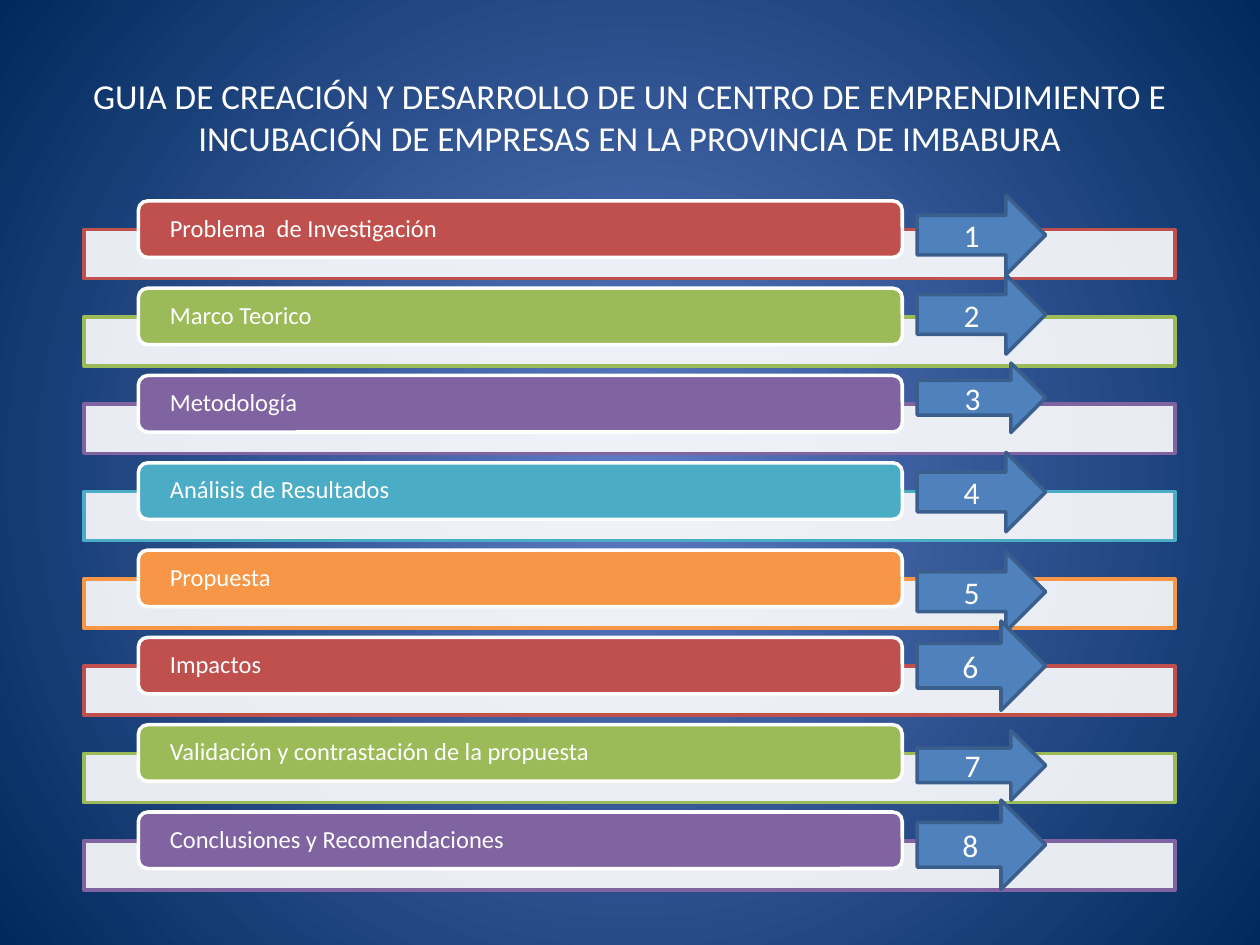
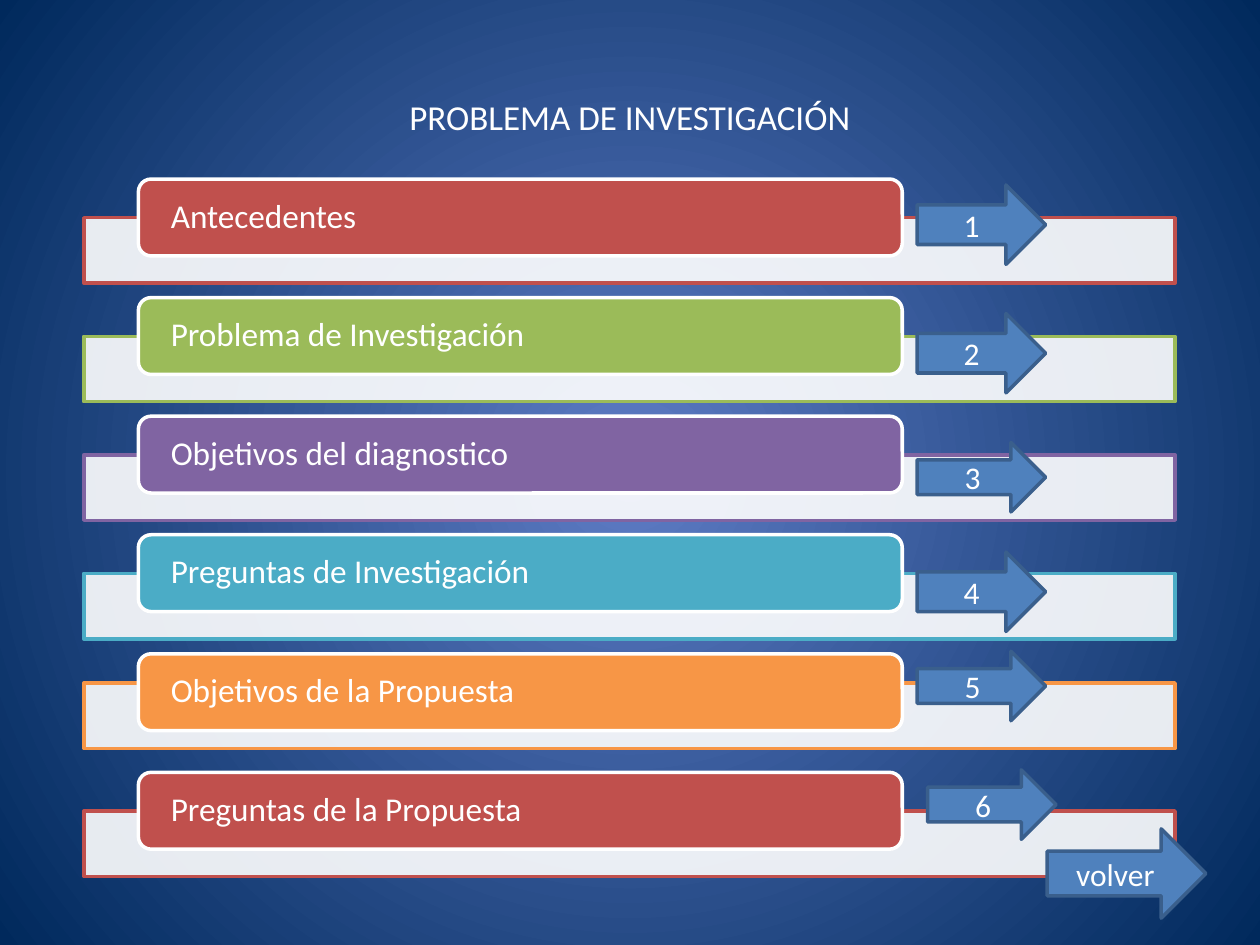
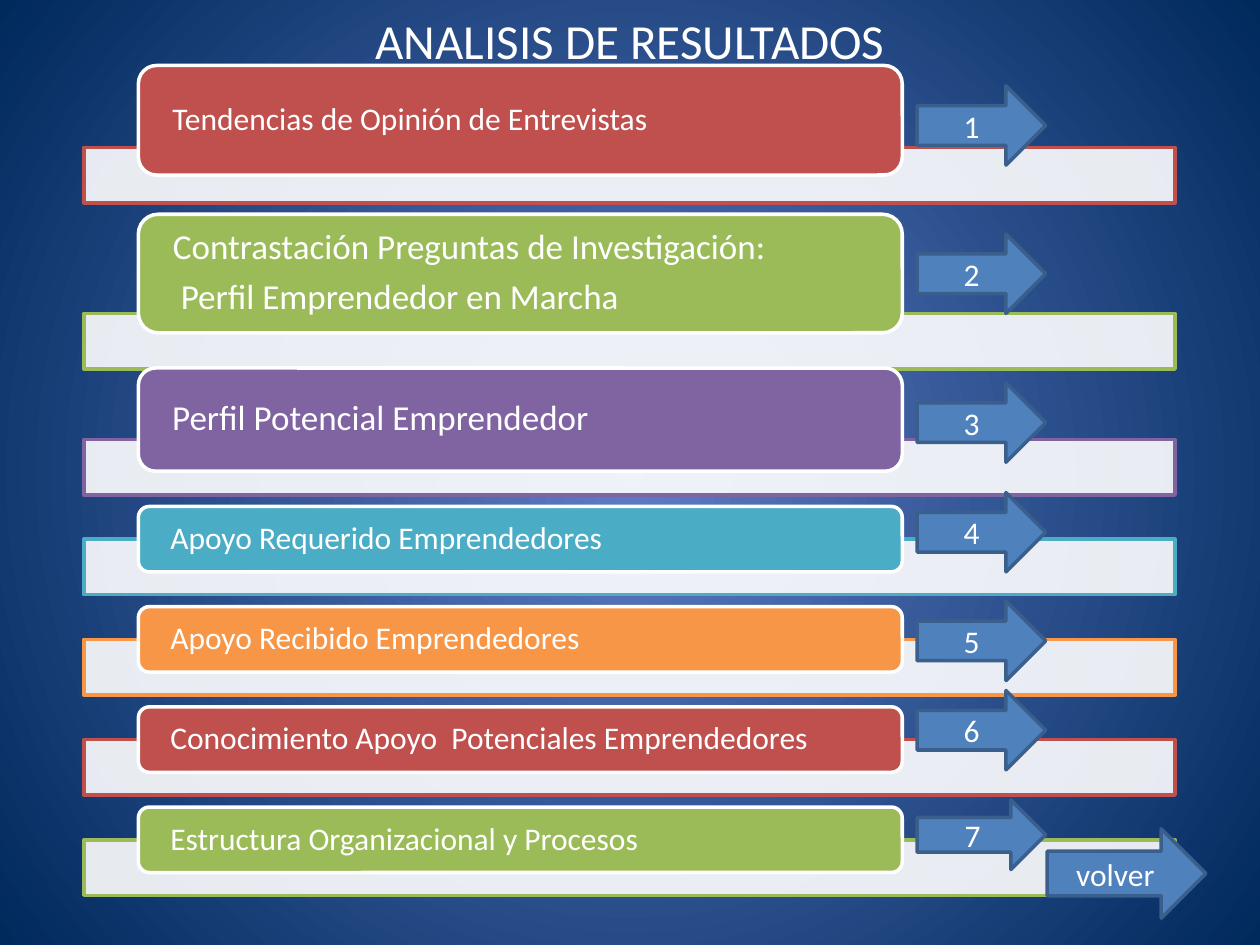
"""Build three index slides: banded entries with numbered arrows."""
from itertools import cycle

from lxml.etree import SubElement
from pptx import Presentation
from pptx.dml.color import RGBColor
from pptx.enum.shapes import MSO_SHAPE
from pptx.enum.text import MSO_ANCHOR, PP_ALIGN
from pptx.oxml.ns import qn
from pptx.util import Cm, Pt

FONT = "Calibri"
WHITE = RGBColor(0xFF, 0xFF, 0xFF)
GLOW = RGBColor(0x5E, 0x7C, 0xC5)
NAVY = RGBColor(0x00, 0x29, 0x5C)
ARROW_BLUE = RGBColor(0x4F, 0x81, 0xBD)
ARROW_EDGE = RGBColor(0x3A, 0x5F, 0x8C)
ACCENTS = [
    RGBColor(0xC0, 0x50, 0x4D),
    RGBColor(0x9B, 0xBB, 0x59),
    RGBColor(0x80, 0x64, 0xA2),
    RGBColor(0x4B, 0xAC, 0xC6),
    RGBColor(0xF7, 0x96, 0x46),
]


def grid(texts, first, pitch, height, drop, size):
    """Return evenly spaced rows: text, label top, label height, bar top, size."""
    tops = [first + i * pitch for i in range(len(texts))]
    return [(text, top, height, top + drop, size) for text, top in zip(texts, tops)]


THESIS_ROWS = grid(
    ["Problema  de Investigación", "Marco Teorico", "Metodología",
     "Análisis de Resultados", "Propuesta", "Impactos",
     "Validación y contrastación de la propuesta",
     "Conclusiones y Recomendaciones"],
    first=4.05, pitch=1.76, height=1.14, drop=0.58, size=14)

PROBLEM_ROWS = grid(
    ["Antecedentes", "Problema de Investigación", "Objetivos del diagnostico",
     "Preguntas de Investigación"],
    first=3.61, pitch=2.39, height=1.55, drop=0.78, size=19)
PROBLEM_ROWS += [
    ("Objetivos de la Propuesta", 13.18, 1.55, 13.77, 19),
    ("Preguntas de la Propuesta", 15.57, 1.55, 16.35, 19),
]

RESULT_ROWS = [
    ("Tendencias de Opinión de Entrevistas", 1.32, 2.21, 2.97, 18),
    ("Contrastación Preguntas de Investigación:\n Perfil Emprendedor en Marcha",
     4.32, 2.39, 6.32, 20),
    ("Perfil Potencial Emprendedor", 7.42, 2.08, 8.86, 20),
]
RESULT_ROWS += grid(
    ["Apoyo Requerido Emprendedores", "Apoyo Recibido Emprendedores",
     "Conocimiento Apoyo  Potenciales Emprendedores",
     "Estructura Organizacional y Procesos"],
    first=10.21, pitch=2.02, height=1.32, drop=0.66, size=18)

SLIDES = [
    {"title": "GUIA DE CREACIÓN Y DESARROLLO DE UN CENTRO DE EMPRENDIMIENTO E "
              "INCUBACIÓN DE EMPRESAS EN LA PROVINCIA DE IMBABURA",
     "title_box": (0.76, 3.18, 20), "rows": THESIS_ROWS, "bar_height": 0.99,
     "arrows": [(3.94, 1.6), (5.54, 1.6), (7.32, 1.4), (9.12, 1.6),
                (11.13, 1.6), (12.52, 1.8), (14.73, 1.4), (16.13, 1.8)],
     "back": False},
    {"title": "PROBLEMA DE INVESTIGACIÓN",
     "title_box": (0.76, 3.18, 20), "rows": PROBLEM_ROWS, "bar_height": 1.32,
     "arrows": [(3.73, 1.6), (6.32, 1.6), (8.92, 1.4), (11.13, 1.6),
                (13.13, 1.4), (15.52, 1.4, 18.7)],
     "back": True},
    {"title": "ANALISIS DE RESULTADOS",
     "title_box": (0.13, 1.37, 28), "rows": RESULT_ROWS, "bar_height": 1.12,
     "arrows": [(1.73, 1.6), (4.72, 1.6), (7.72, 1.6), (9.93, 1.6),
                (12.12, 1.6), (13.92, 1.6), (16.13, 1.4)],
     "back": True},
]


def set_background(master):
    fill = master.background.fill
    fill.gradient()
    for stop, color in zip(fill.gradient_stops, (GLOW, NAVY)):
        stop.color.rgb = color
    grad = master.element.find(".//" + qn("p:bg")).find(".//" + qn("a:gradFill"))
    grad.remove(grad.find(qn("a:lin")))
    circle = SubElement(grad, qn("a:path"), path="circle")
    SubElement(circle, qn("a:fillToRect"), l="50000", t="50000", r="50000", b="50000")


def write(sp, text, size, align):
    tf = sp.text_frame
    tf.word_wrap = True
    tf.vertical_anchor = MSO_ANCHOR.MIDDLE
    tf.text = text
    for p in tf.paragraphs:
        p.alignment = align
        for r in p.runs:
            r.font.name = FONT
            r.font.size = Pt(size)
            r.font.color.rgb = WHITE
    return tf


def add_box(s, kind, left, top, width, height, fill, line):
    sp = s.shapes.add_shape(kind, Cm(left), Cm(top), Cm(width), Cm(height))
    sp.shadow.inherit = False
    sp.fill.solid()
    sp.fill.fore_color.rgb = fill
    sp.line.color.rgb = line
    sp.line.width = Pt(2)
    return sp


def add_title(s, text, top, height, size):
    sp = s.shapes.add_textbox(Cm(1.27), Cm(top), Cm(22.86), Cm(height))
    write(sp, text, size, PP_ALIGN.CENTER)


def add_row(s, accent, bar_height, text, top, height, bar_top, size):
    bar = add_box(s, MSO_SHAPE.RECTANGLE, 1.69, bar_top, 22, bar_height, WHITE, accent)
    color = bar.fill._xPr.find(qn("a:solidFill"))[0]
    SubElement(color, qn("a:alpha"), val="90000")
    label = add_box(s, MSO_SHAPE.ROUNDED_RECTANGLE, 2.79, top, 15.4, height, accent, WHITE)
    tf = write(label, text, size, PP_ALIGN.LEFT)
    tf.margin_left = tf.margin_right = Cm(0.58)
    tf.margin_top = tf.margin_bottom = 0
    for p in tf.paragraphs:
        p.line_spacing = 0.9
        p.space_after = Pt(round(size * 0.35))


def add_arrow(s, text, top, height, left=18.49, width=2.59):
    sp = add_box(s, MSO_SHAPE.RIGHT_ARROW, left, top, width, height, ARROW_BLUE, ARROW_EDGE)
    write(sp, text, 18, PP_ALIGN.CENTER)


def main():
    prs = Presentation()
    prs.slide_width, prs.slide_height = Cm(25.4), Cm(19.05)
    set_background(prs.slide_master)
    for content in SLIDES:
        s = prs.slides.add_slide(prs.slide_layouts[6])
        add_title(s, content["title"], *content["title_box"])
        for accent, row in zip(cycle(ACCENTS), content["rows"]):
            add_row(s, accent, content["bar_height"], *row)
        if content["back"]:
            add_arrow(s, "volver", 16.71, 1.8, left=21.11, width=3.2)
        for number, place in enumerate(content["arrows"], 1):
            add_arrow(s, str(number), *place)
    prs.save("out.pptx")


if __name__ == "__main__":
    main()
